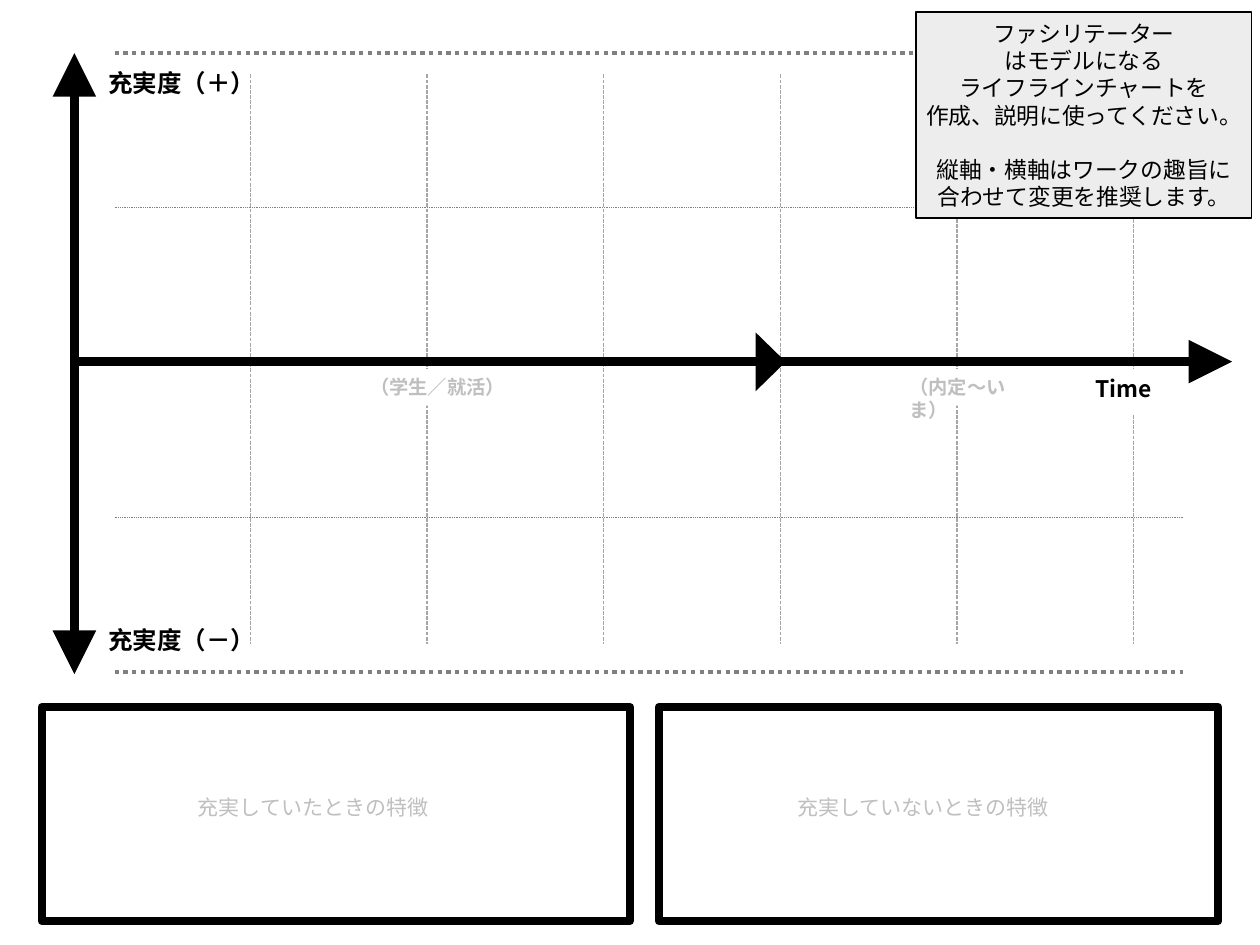
import pptx
import pptx.dml.color
import pptx.enum.dml
import pptx.enum.shapes
import pptx.enum.text
import pptx.oxml.ns
import pptx.util
from lxml import etree

Cm = pptx.util.Cm
Pt = pptx.util.Pt
Shape = pptx.enum.shapes.MSO_SHAPE
Dash = pptx.enum.dml.MSO_LINE
Align = pptx.enum.text.PP_ALIGN
Anchor = pptx.enum.text.MSO_ANCHOR

BLACK, WHITE, GRAY = "000000", "FFFFFF", "BFBFBF"


def color(value):
    return pptx.dml.color.RGBColor.from_string(value)


class Sheet:
    """Style of the worksheet and the slide being drawn."""
    font = "Noto Sans CJK JP"
    leading = 1.2

    def __init__(self, slide):
        self.slide = slide

    def line(self, x1, y1, x2, y2, tint, width, dash=None, arrows=()):
        line = self.slide.shapes.add_connector(
            pptx.enum.shapes.MSO_CONNECTOR.STRAIGHT, Cm(x1), Cm(y1), Cm(x2), Cm(y2))
        line.line.color.rgb = color(tint)
        line.line.width = Pt(width)
        if dash:
            line.line.dash_style = dash
        properties = line.line._get_or_add_ln()
        for end in arrows:
            etree.SubElement(properties, pptx.oxml.ns.qn(f"a:{end}"),
                             type="triangle", w="lg", len="lg")
        etree.SubElement(line._element.spPr, pptx.oxml.ns.qn("a:effectLst"))

    def shape(self, kind, left, top, width, height, fill, border=None):
        shape = self.slide.shapes.add_shape(kind, Cm(left), Cm(top), Cm(width), Cm(height))
        shape.shadow.inherit = False
        shape.fill.solid()
        shape.fill.fore_color.rgb = color(fill)
        if border:
            shape.line.color.rgb = color(BLACK)
            shape.line.width = Pt(border)
        else:
            shape.line.fill.background()
        return shape

    def label(self, text, left, top, width, height, size, tint=BLACK, bold=True, fill=None):
        if fill:
            box = self.shape(Shape.RECTANGLE, left, top, width, height, fill)
        else:
            box = self.slide.shapes.add_textbox(Cm(left), Cm(top), Cm(width), Cm(height))
        return self.set_text(box, text, size, tint, bold)

    def set_text(self, box, text, size, tint=BLACK, bold=False,
                 align=Align.LEFT, anchor=Anchor.TOP, inset=None):
        frame = box.text_frame
        frame.text = text
        frame.word_wrap = True
        frame.vertical_anchor = anchor
        if inset is not None:
            frame.margin_left = frame.margin_right = Cm(inset)
            frame.margin_top = frame.margin_bottom = Cm(inset)
        for paragraph in frame.paragraphs:
            paragraph.alignment = align
            paragraph.line_spacing = Pt(size * self.leading)
            for run in paragraph.runs:
                run.font.name = self.font
                run.font.size = Pt(size)
                run.font.bold = bold
                run.font.color.rgb = color(tint)
                # East Asian text takes its own font element
                etree.SubElement(run.font._element, pptx.oxml.ns.qn("a:ea"),
                                 typeface=self.font)
        return frame


def main():
    deck = pptx.Presentation()
    deck.slide_width, deck.slide_height = Cm(25.4), Cm(19.05)
    sheet = Sheet(deck.slides.add_slide(deck.slide_layouts[6]))

    # Fulfilment axis
    axis_x, axis_y = 1.5, 7.29
    sheet.line(axis_x, 1.07, axis_x, 13.59, BLACK, 5, arrows=("headEnd", "tailEnd"))

    # Grid: outer rows are heavy, the time axis takes the middle row
    for row, width in ((0, 2.5), (1, 0.5), (3, 0.5), (4, 2.5)):
        y = 1.07 + 3.12 * row
        sheet.line(2.31, y, 23.85, y, "808080", width, Dash.ROUND_DOT)
    for column in range(6):
        x = 5.05 + 3.56 * column
        sheet.line(x, 1.5, x, 12.98, "A6A6A6", 0.75, Dash.SQUARE_DOT)

    # Axis labels and periods
    for text, top in (("充実度（＋）", 1.24), ("充実度（－）", 12.47)):
        sheet.label(text, 1.93, top, 3.5, 0.94, 14)
    sheet.label("Time", 21.84, 7.44, 2.18, 0.91, 13, fill=WHITE)
    for text, left, width in (("（学生／就活）", 7.21, 3.25), ("（内定～いま）", 18.08, 3.2)):
        sheet.label(text, left, 7.44, width, 0.74, 11, GRAY, fill=WHITE)

    # Time axis with its midway marker
    sheet.line(axis_x, axis_y, 24.84, axis_y, BLACK, 5, arrows=("tailEnd",))
    marker = sheet.shape(Shape.ISOSCELES_TRIANGLE, 14.94, 6.99, 1.19, 0.61, BLACK)
    marker.rotation = 90

    # Boxes for the features of good and bad times
    for text, left, width, text_left in (
            ("充実していたときの特徴", 0.84, 11.86, 3.86),
            ("充実していないときの特徴", 13.28, 11.28, 15.95)):
        sheet.shape(Shape.RECTANGLE, left, 14.25, width, 4.32, WHITE, 4.5)
        caption = sheet.label(text, text_left, 15.88, 7.01, 0.76, 12, GRAY, bold=False)
        caption.margin_left = caption.margin_top = Cm(0.13)

    # Note to the facilitator
    note = sheet.shape(Shape.RECTANGLE, 18.47, 0.25, 6.76, 4.14, "EDEDED", 1)
    advice = sheet.set_text(
        note,
        "ファシリテーター\nはモデルになる\nライフラインチャートを\n作成、説明に使ってください。\n"
        "縦軸・横軸はワークの趣旨に\n合わせて変更を推奨します。",
        13, align=Align.CENTER, anchor=Anchor.MIDDLE, inset=0.13)
    advice.paragraphs[4].space_before = Pt(15.6)

    deck.save("out.pptx")


if __name__ == "__main__":
    main()
